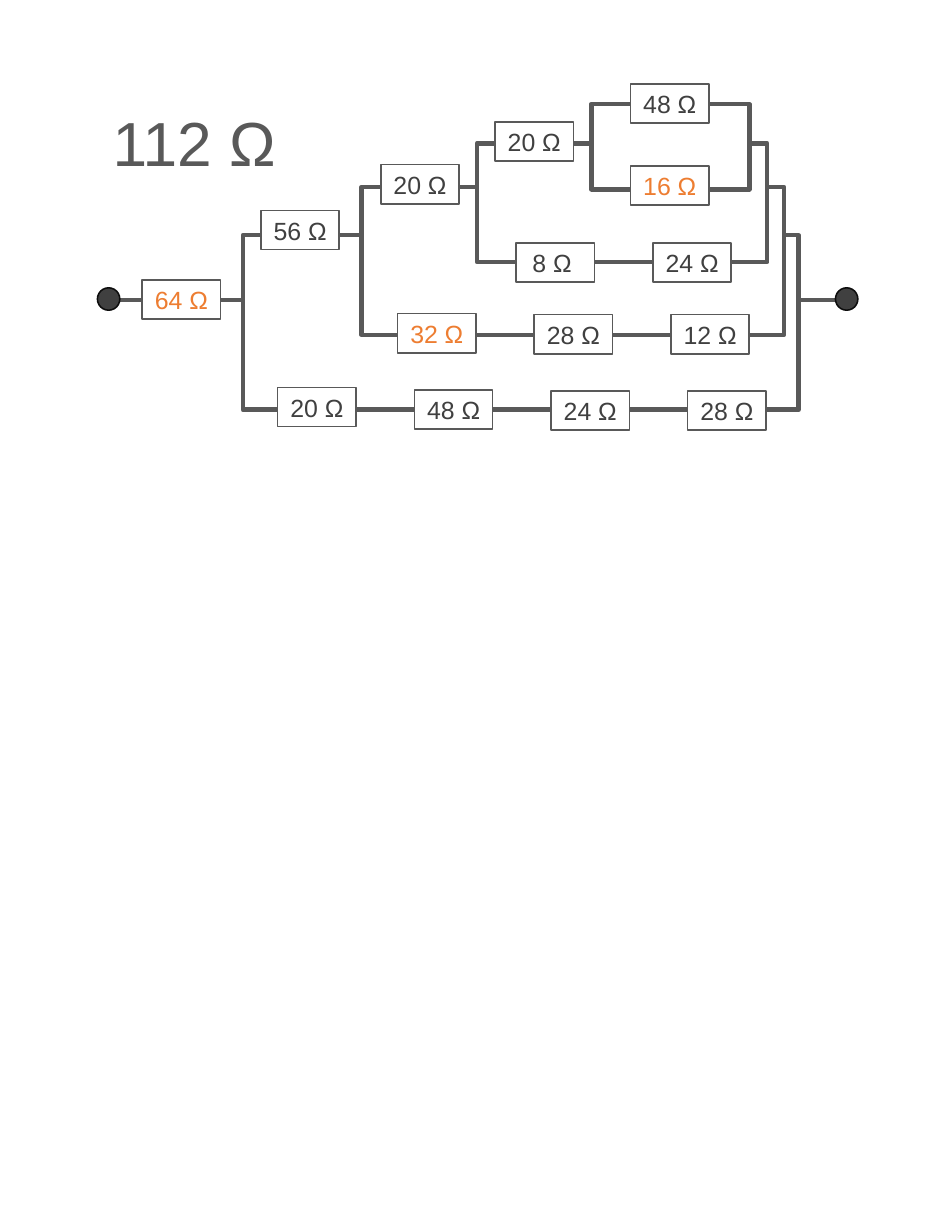
import pptx
import pptx.util
import pptx.dml.color
import pptx.enum.shapes
import pptx.enum.text
import lxml.etree
import dataclasses

Inches = pptx.util.Inches
Pt = pptx.util.Pt
Kind = pptx.enum.shapes.MSO_SHAPE
Align = pptx.enum.text.PP_ALIGN
Anchor = pptx.enum.text.MSO_ANCHOR
Color = pptx.dml.color.RGBColor.from_string


@dataclasses.dataclass
class Theme:
    paper: str = "FFFFFF"
    wire: str = "595959"
    dot: str = "404040"
    rim: str = "0D0D0D"
    ink: str = "404040"
    hot: str = "ED7D31"
    font: str = "Arial"
    head: int = 40
    label: int = 16
    thick: int = 3
    thin: int = 1


theme = Theme()


def draw(kind, box, fill, line, width):
    shape = slide.shapes.add_shape(kind, *map(Inches, box))
    shape.shadow.inherit = False
    shape.fill.solid()
    shape.fill.fore_color.rgb = Color(fill)
    shape.line.color.rgb = Color(line)
    shape.line.width = Pt(width)
    return shape


def style(para, size, color, align):
    para.alignment = align
    for run in para.runs:
        run.font.name = theme.font
        run.font.size = Pt(size)
        run.font.color.rgb = Color(color)


deck = pptx.Presentation()
deck.slide_width = Inches(8.5)
deck.slide_height = Inches(11)
slide = deck.slides.add_slide(deck.slide_layouts[5])

wire = slide.shapes.add_connector(
    pptx.enum.shapes.MSO_CONNECTOR.STRAIGHT,
    Inches(0.94), Inches(2.68), Inches(7.54), Inches(2.68))
wire.line.color.rgb = Color(theme.wire)
wire.line.width = Pt(theme.thick)
lxml.etree.SubElement(
    wire._element.spPr,
    "{http://schemas.openxmlformats.org/drawingml/2006/main}effectLst")

loops = [
    (2.17, 2.1, 4.96, 1.56),
    (3.23, 1.67, 3.77, 1.32),
    (4.26, 1.28, 2.59, 1.06),
    (5.28, 0.93, 1.41, 0.76),
]
for box in loops:
    draw(Kind.RECTANGLE, box, theme.paper, theme.wire, theme.thick)

for left in (0.87, 7.46):
    draw(Kind.OVAL, (left, 2.57, 0.2, 0.2), theme.dot, theme.rim, theme.thin)

step = 1.22
chains = [
    (1.27, [(64, 2.5)]),
    (2.33, [(56, 1.88)]),
    (3.4, [(20, 1.47)]),
    (4.42, [(20, 1.09)]),
    (5.63, [(48, 0.75)]),
    (5.63, [(16, 1.48)]),
    (3.55, [(32, 2.8), (28, 2.81), (12, 2.81)]),
    (4.61, [(8, 2.17), (24, 2.17)]),
    (2.48, [(20, 3.46), (48, 3.48), (24, 3.49), (28, 3.49)]),
]
marked = {64, 16, 32}
for left, parts in chains:
    for index, (ohms, top) in enumerate(parts):
        box = (left + index * step, top, 0.7, 0.35)
        part = draw(Kind.RECTANGLE, box, theme.paper, theme.wire, theme.thin)
        frame = part.text_frame
        frame.text = f"{ohms} Ω "
        frame.word_wrap = True
        frame.vertical_anchor = Anchor.MIDDLE
        color = theme.hot if ohms in marked else theme.ink
        style(frame.paragraphs[0], theme.label, color, Align.CENTER)

title = slide.shapes.title
title.left, title.top = Inches(0.87), Inches(0.88)
title.width, title.height = Inches(1.69), Inches(0.77)
frame = title.text_frame
frame.text = "112 Ω"
frame.word_wrap = False
frame.auto_size = pptx.enum.text.MSO_AUTO_SIZE.SHAPE_TO_FIT_TEXT
frame.vertical_anchor = Anchor.TOP
style(frame.paragraphs[0], theme.head, theme.wire, Align.RIGHT)

deck.save("out.pptx")
